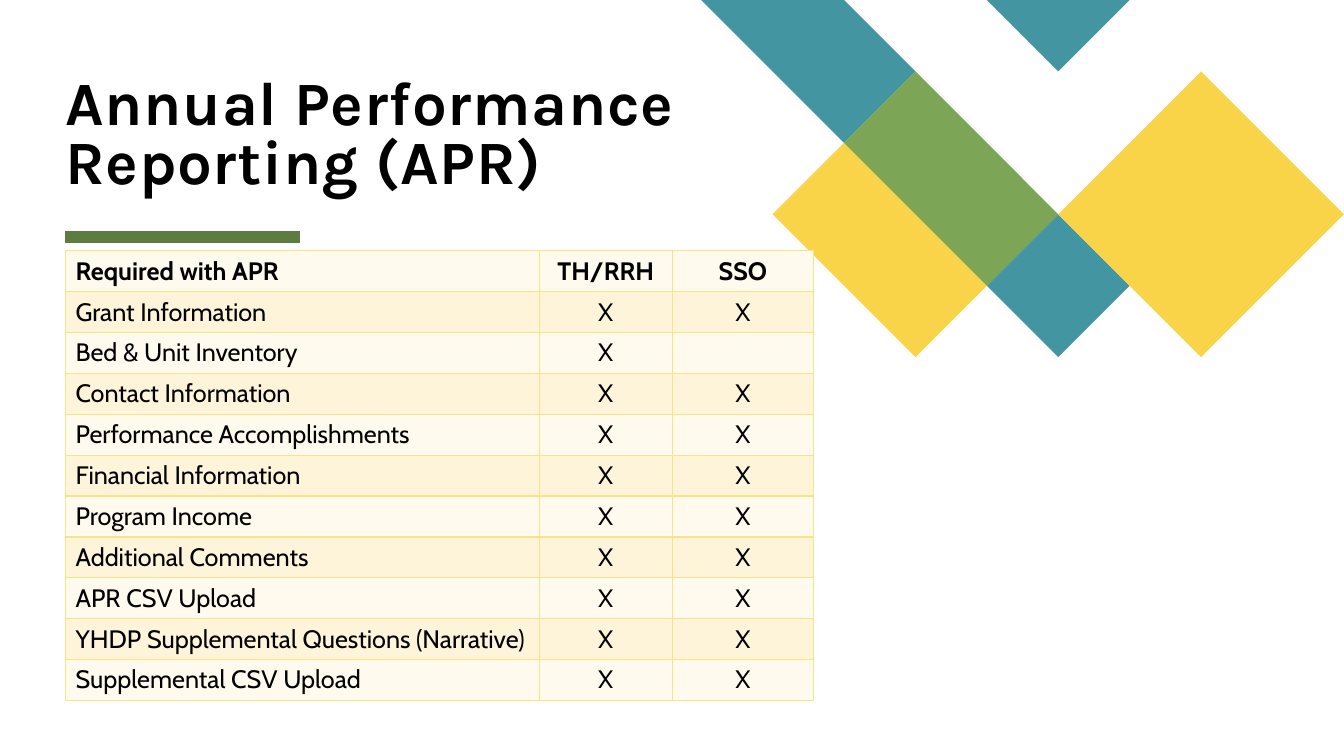
from lxml import etree
from pptx import Presentation
from pptx.dml.color import RGBColor
from pptx.enum.text import MSO_ANCHOR, MSO_AUTO_SIZE, PP_ALIGN
from pptx.enum.shapes import MSO_CONNECTOR
from pptx.oxml.ns import qn
from pptx.util import Cm, Pt

LEFT, CENTER = PP_ALIGN.LEFT, PP_ALIGN.CENTER
BOTTOM, NO_FIT = MSO_ANCHOR.BOTTOM, MSO_AUTO_SIZE.NONE
STRAIGHT = MSO_CONNECTOR.STRAIGHT

TEAL, YELLOW, GREEN = "4495A2", "F9D448", "7CA655"
BLACK, RULE_GREEN, BORDER = "000000", "5D7D40", "FBE284"
BANDS = ["FEFAED", "FDF4D9"]

GRID_LEFT, GRID_STEP = 17.67, 1.8
RIBBONS = [
    (TEAL, [[(3, 1), (2, 0), (0, 0), (2, 2)], [(6, 4), (5, 3), (4, 4), (5, 5)]]),
    (YELLOW, [[(2, 2), (1, 3), (3, 5), (4, 4)]]),
    (TEAL, [[(6, 0), (4, 0), (5, 1)]]),
    (GREEN, [[(3, 1), (2, 2), (4, 4), (5, 3)]]),
    (YELLOW, [[(9, 3), (7, 1), (5, 3), (7, 5)]]),
]

REQUIREMENTS = [
    ("Required with APR", "TH/RRH", "SSO"),
    ("Grant Information", "X", "X"),
    ("Bed & Unit Inventory", "X", ""),
    ("Contact Information", "X", "X"),
    ("Performance Accomplishments", "X", "X"),
    ("Financial Information", "X", "X"),
    ("Program Income", "X", "X"),
    ("Additional Comments", "X", "X"),
    ("APR CSV Upload", "X", "X"),
    ("YHDP Supplemental Questions (Narrative)", "X", "X"),
    ("Supplemental CSV Upload", "X", "X"),
]
COLUMN_WIDTHS = [11.94, 3.35, 3.56]
ROW_HEIGHT = 1.03


def color(value):
    return RGBColor.from_string(value)


def assign(target, values):
    for name, value in values.items():
        setattr(target, name, value)


class SlideBuilder:
    title_font = {"name": "Karla", "size": Pt(44), "bold": True}
    table_font = {"name": "Cabin", "size": Pt(18)}

    def __init__(self, deck):
        self.page = deck.slides.add_slide(deck.slide_layouts[5])

    def add_span(self, para, text, font, tracking=None):
        span = para.add_run()
        span.text = text
        assign(span.font, font)
        span.font.color.rgb = color(BLACK)
        if tracking is not None:
            span.font._element.set("spc", str(tracking))

    def title(self, text, left, top, width, height):
        box = self.page.shapes.title
        assign(box, {"left": Cm(left), "top": Cm(top),
                     "width": Cm(width), "height": Cm(height)})
        frame = box.text_frame
        assign(frame, {"margin_left": 0, "margin_right": 0, "margin_top": 0,
                       "margin_bottom": 0, "word_wrap": True,
                       "auto_size": NO_FIT, "vertical_anchor": BOTTOM})
        para = frame.paragraphs[0]
        assign(para, {"alignment": LEFT, "line_spacing": 0.8})
        self.add_span(para, text, self.title_font, 50)

    def ribbon(self, fill, outlines):
        first, *others = outlines
        builder = self.page.shapes.build_freeform(*first[0], scale=Cm(GRID_STEP))
        builder.add_line_segments(first[1:])
        for outline in others:
            builder.move_to(*outline[0])
            builder.add_line_segments(outline[1:])
        shape = builder.convert_to_shape(Cm(GRID_LEFT), 0)
        shape.shadow.inherit = False
        shape.fill.solid()
        shape.fill.fore_color.rgb = color(fill)
        shape.line.fill.background()

    def rule(self, left, right, top, line_color, weight):
        line = self.page.shapes.add_connector(
            STRAIGHT, Cm(left), Cm(top), Cm(right), Cm(top))
        line.line.color.rgb = color(line_color)
        line.line.width = Pt(weight)
        etree.SubElement(line._element.spPr, qn("a:effectLst"))

    def borders(self, cell):
        properties = cell._tc.get_or_add_tcPr()
        for index, side in enumerate(["lnL", "lnR", "lnT", "lnB"]):
            edge = etree.Element(qn(f"a:{side}"), w=str(Pt(1)))
            fill = etree.SubElement(edge, qn("a:solidFill"))
            etree.SubElement(fill, qn("a:srgbClr"), val=BORDER)
            properties.insert(index, edge)

    def table(self, rows, widths, row_height, left, top):
        table = self.page.shapes.add_table(
            len(rows), len(widths), Cm(left), Cm(top),
            Cm(sum(widths)), Cm(row_height * len(rows))).table
        for column, width in zip(table.columns, widths):
            column.width = Cm(width)
        for row_index, row in enumerate(rows):
            for column_index, text in enumerate(row):
                cell = table.cell(row_index, column_index)
                cell.fill.solid()
                cell.fill.fore_color.rgb = color(BANDS[row_index % 2])
                self.borders(cell)
                para = cell.text_frame.paragraphs[0]
                para.alignment = CENTER if column_index else LEFT
                if text:
                    self.add_span(para, text, {**self.table_font, "bold": row_index == 0})


def main():
    deck = Presentation()
    assign(deck, {"slide_width": Cm(33.87), "slide_height": Cm(19.05)})
    slide = SlideBuilder(deck)
    for fill, outlines in RIBBONS:
        slide.ribbon(fill, outlines)
    slide.rule(1.65, 7.57, 5.97, RULE_GREEN, 8)
    slide.title("Annual Performance Reporting (APR)", 1.65, 0.53, 18.85, 4.42)
    slide.table(REQUIREMENTS, COLUMN_WIDTHS, ROW_HEIGHT, 1.65, 6.32)
    deck.save("out.pptx")


if __name__ == "__main__":
    main()
